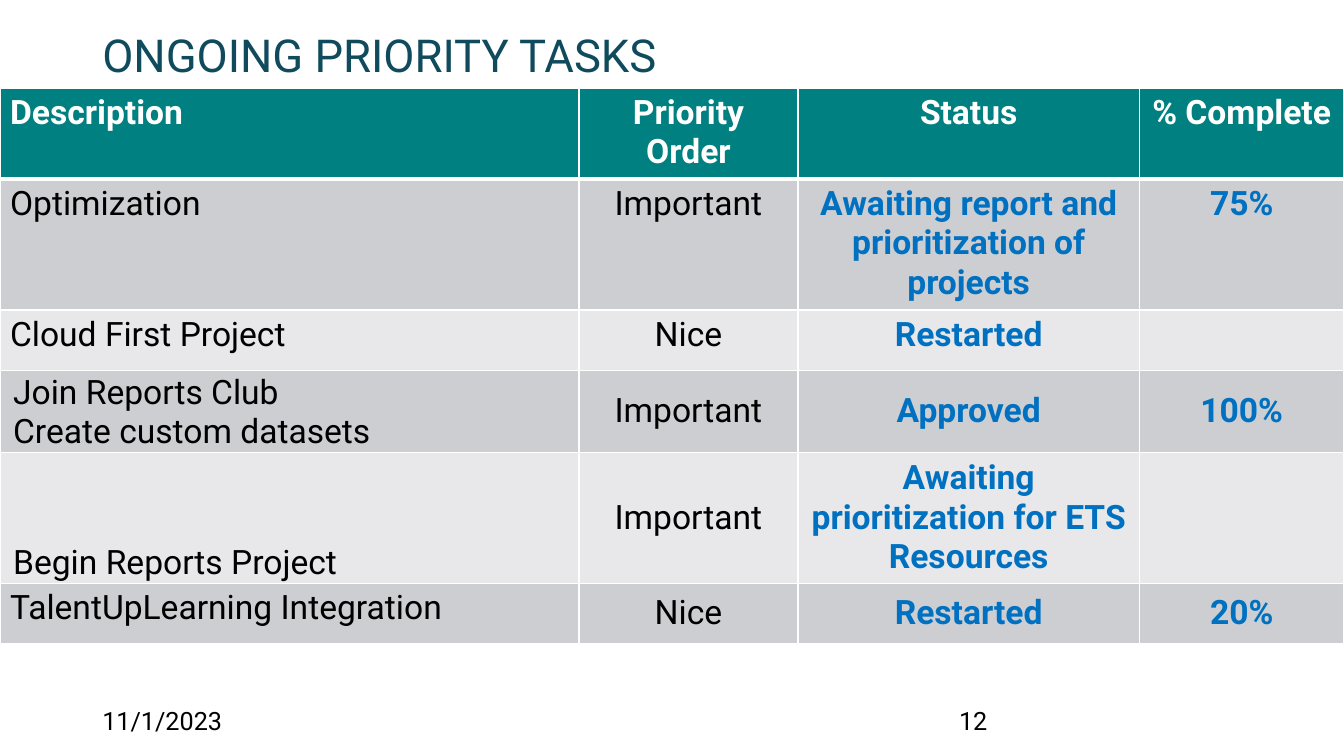
from dataclasses import dataclass

from lxml import etree
from pptx import Presentation
from pptx.dml.color import RGBColor
from pptx.enum import text
from pptx.oxml import ns
from pptx.util import Pt


@dataclass(frozen=True)
class Theme:
    """Hold the colours, font and type sizes of the slide."""
    font: str = "Roboto"
    title_size: float = 32.4
    table_size: float = 24
    footer_size: float = 18
    title: str = "0F4B5C"
    ink: str = "000000"
    accent: str = "0070C0"
    paper: str = "FFFFFF"
    header: str = "008080"
    bands: tuple = ("CDCED2", "E8E8EA")


def assign(target, values):
    """Set each attribute of the target from a dict of values."""
    for name, value in values.items():
        setattr(target, name, value)


class TaskSlide:
    """Draw styled elements on one slide."""

    def __init__(self, slide, theme):
        """Keep the slide and its theme."""
        self.slide, self.theme = slide, theme

    def wording(self, frame, words, size, color, bold=False, align=text.PP_ALIGN.LEFT):
        """Fill a text frame, one paragraph per line of words."""
        frame.text = words
        for paragraph in frame.paragraphs:
            paragraph.alignment = align
            for run in paragraph.runs:
                assign(run.font, {"name": self.theme.font, "size": Pt(size), "bold": bold})
                run.font.color.rgb = RGBColor.from_string(color)

    def label(self, words, box, size, color, anchor=text.MSO_ANCHOR.TOP):
        """Add a wrapped line of text in a box."""
        frame = self.slide.shapes.add_textbox(*map(Pt, box)).text_frame
        assign(frame, {"word_wrap": True, "vertical_anchor": anchor})
        self.wording(frame, words, size, color)

    def border(self, cell, widths):
        """Rule the left, right, top and bottom edges of a cell."""
        properties = cell._tc.get_or_add_tcPr()
        for side, width in zip("LRTB", widths):
            line = etree.SubElement(properties, ns.qn(f"a:ln{side}"), w=str(Pt(width)))
            fill = etree.SubElement(line, ns.qn("a:solidFill"))
            etree.SubElement(fill, ns.qn("a:srgbClr"), val=self.theme.paper)

    def cell(self, cell, words, fill, widths, layout, style):
        """Rule, fill, lay out and letter one table cell."""
        self.border(cell, widths)
        cell.fill.solid()
        cell.fill.fore_color.rgb = RGBColor.from_string(fill)
        assign(cell, layout)
        self.wording(cell.text_frame, words, self.theme.table_size, **style)

    def table(self, rows, top, widths, heights, centred_from, tight_rows):
        """Add the task table with a header row and banded tasks."""
        theme = self.theme
        tasks = self.slide.shapes.add_table(
            len(rows), len(widths), 0, Pt(top), Pt(sum(widths)), Pt(sum(heights))).table
        for column, width in zip(tasks.columns, widths):
            column.width = Pt(width)
        for r, (row, height) in enumerate(zip(rows, heights)):
            tasks.rows[r].height = Pt(height)
            fill = theme.bands[(r - 1) % 2] if r else theme.header
            edges = (1, 1, 3 if r == 1 else 1, 1 if r else 3)
            for c, words in enumerate(row):
                marked = c >= 2
                style = {
                    "color": (theme.accent if marked else theme.ink) if r else theme.paper,
                    "bold": marked or r == 0,
                    "align": text.PP_ALIGN.CENTER if c else text.PP_ALIGN.LEFT,
                }
                layout = {"vertical_anchor": text.MSO_ANCHOR.TOP}
                if c and r >= centred_from:
                    layout = {"vertical_anchor": text.MSO_ANCHOR.MIDDLE}
                elif c == 0 and r in tight_rows:
                    layout = {"vertical_anchor": text.MSO_ANCHOR.BOTTOM, "margin_left": Pt(9.4),
                              "margin_right": Pt(0.7), "margin_top": Pt(0.7), "margin_bottom": 0}
                self.cell(tasks.cell(r, c), words, fill, edges, layout, style)


TASKS = [
    ("Description", "Priority Order", "Status", "% Complete"),
    ("Optimization", "Important", "Awaiting report and prioritization of projects", "75%"),
    ("Cloud First Project", "Nice", "Restarted", ""),
    ("Join Reports Club\nCreate custom datasets", "Important", "Approved", "100%"),
    ("Begin Reports Project", "Important", "Awaiting prioritization for ETS Resources", ""),
    ("TalentUpLearning Integration", "Nice", "Restarted", "20%"),
]


def main():
    """Build and save the priority task slide."""
    deck = Presentation()
    assign(deck, {"slide_width": Pt(960), "slide_height": Pt(540)})
    theme = Theme()
    page = TaskSlide(deck.slides.add_slide(deck.slide_layouts[6]), theme)
    for words, left in (("11/1/2023", 66), ("12", 678)):
        page.label(words, (left, 500.4, 216, 28.8), theme.footer_size, theme.ink)
    page.label("ONGOING PRIORITY TASKS", (66, 15.1, 828, 47.5), theme.title_size,
               theme.title, text.MSO_ANCHOR.MIDDLE)
    page.table(TASKS, top=63, widths=(413.6, 156.4, 244, 146),
               heights=(63, 92, 43.2, 56.6, 92, 43.2), centred_from=3, tight_rows=(3, 4))
    deck.save("out.pptx")


if __name__ == "__main__":
    main()
